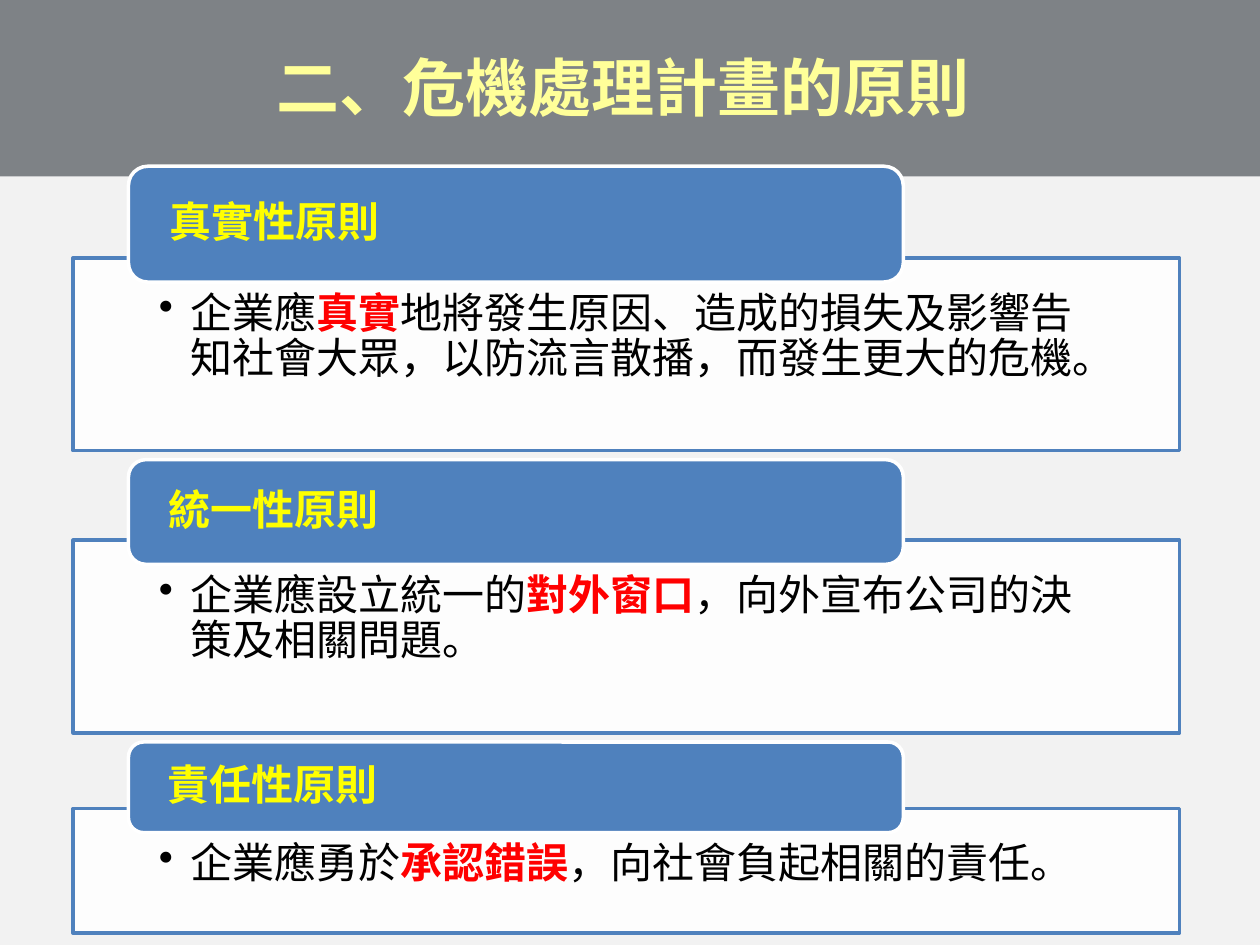
from dataclasses import dataclass

from lxml import etree
from pptx import Presentation
from pptx.dml.color import RGBColor
from pptx.enum.shapes import MSO_SHAPE
from pptx.enum.text import MSO_ANCHOR, PP_ALIGN
from pptx.oxml.ns import qn
from pptx.util import Pt

RECTANGLE = MSO_SHAPE.RECTANGLE
ROUNDED = MSO_SHAPE.ROUNDED_RECTANGLE
TOP, MIDDLE, BOTTOM = MSO_ANCHOR.TOP, MSO_ANCHOR.MIDDLE, MSO_ANCHOR.BOTTOM
LEFT, CENTER = PP_ALIGN.LEFT, PP_ALIGN.CENTER


@dataclass(frozen=True)
class Theme:
    font: str = "Noto Sans CJK SC"
    title_size: int = 36
    text_size: int = 24
    line_width: int = 2
    background: str = "F2F2F2"
    band: str = "0C141C"
    title: str = "FFFF99"
    accent: str = "4F81BD"
    white: str = "FFFFFF"
    heading: str = "FFFF00"
    body: str = "000000"
    emphasis: str = "FF0000"


THEME = Theme()

TITLE = "二、危機處理計畫的原則"
# heading, (before, emphasised, after), heading height, panel height
PRINCIPLES = [
    ("真實性原則",
     ("企業應", "真實", "地將發生原因、造成的損失及影響告知社會大眾，以防流言散播，而發生更大的危機。"),
     66.2, 110.2),
    ("統一性原則",
     ("企業應設立統一的", "對外窗口", "，向外宣布公司的決策及相關問題。"),
     59.8, 110.2),
    ("責任性原則",
     ("企業應勇於", "承認錯誤", "，向社會負起相關的責任。"),
     51.8, 71.3),
]

PAGE_WIDTH, PAGE_HEIGHT = 720, 540
BAND_HEIGHT = 100.8
TITLE_BOX = (36.7, 12.2, 638, 62.6)
PANEL_LEFT, PANEL_WIDTH = 41.8, 632.2
HEADING_LEFT, HEADING_WIDTH = 73.4, 442.8
FIRST_TOP, OVERLAP, GAP = 95, 13.8, 5.1
TITLE_INSETS = (6, 3, 6, 3)
PANEL_INSETS = (49, 19.4, 49, 13.7)
HEADING_INSETS = (20, 0, 20, 0)
BULLET_INDENT = 18


def color(value):
    return RGBColor.from_string(value)


def add_box(page, kind, frame, fill, line=None, opacity=100):
    box = page.shapes.add_shape(kind, *map(Pt, frame))
    box.shadow.inherit = False
    box.fill.solid()
    box.fill.fore_color.rgb = color(fill)
    if opacity < 100:
        fill_color = box.fill._xPr.find(qn("a:solidFill"))[0]
        etree.SubElement(fill_color, qn("a:alpha"), val=str(opacity * 1000))
    if line:
        box.line.color.rgb = color(line)
        box.line.width = Pt(THEME.line_width)
    else:
        box.line.fill.background()
    return box


def write(box, spans, size, insets, anchor, align=LEFT):
    """Fill the box with one paragraph of (text, colour, bold) spans."""
    frame = box.text_frame
    frame.word_wrap = True
    frame.vertical_anchor = anchor
    (frame.margin_left, frame.margin_top,
     frame.margin_right, frame.margin_bottom) = map(Pt, insets)
    para = frame.paragraphs[0]
    para.alignment = align
    para.line_spacing = 0.9
    for text, text_color, bold in spans:
        span = para.add_run()
        span.text = text
        span.font.size = Pt(size)
        span.font.bold = bold
        span.font.color.rgb = color(text_color)
        span.font.name = THEME.font
        etree.SubElement(span.font._element, qn("a:ea"), typeface=THEME.font)
    return para


def add_bullet(para):
    props = para._p.get_or_add_pPr()
    props.set("marL", str(Pt(BULLET_INDENT)))
    props.set("indent", str(-Pt(BULLET_INDENT)))
    etree.SubElement(props, qn("a:buChar"), char="•")


def add_principle(page, top, heading, parts, heading_height, panel_height):
    """Draw a panel with its overlapping heading; return the panel's bottom."""
    panel_top = top + heading_height - OVERLAP
    panel = add_box(page, RECTANGLE, (PANEL_LEFT, panel_top, PANEL_WIDTH, panel_height),
                    THEME.white, THEME.accent, opacity=90)
    before, emphasised, after = parts
    spans = [(before, THEME.body, False), (emphasised, THEME.emphasis, True),
             (after, THEME.body, False)]
    add_bullet(write(panel, spans, THEME.text_size, PANEL_INSETS, TOP))

    tab = add_box(page, ROUNDED, (HEADING_LEFT, top, HEADING_WIDTH, heading_height),
                  THEME.accent, THEME.white)
    write(tab, [(heading, THEME.heading, True)], THEME.text_size, HEADING_INSETS, MIDDLE)
    return panel_top + panel_height


def main():
    deck = Presentation()
    deck.slide_width, deck.slide_height = Pt(PAGE_WIDTH), Pt(PAGE_HEIGHT)
    page = deck.slides.add_slide(deck.slide_layouts[6])
    page.background.fill.solid()
    page.background.fill.fore_color.rgb = color(THEME.background)

    add_box(page, RECTANGLE, (0, 0, PAGE_WIDTH, BAND_HEIGHT), THEME.band, opacity=50)
    title = page.shapes.add_textbox(*map(Pt, TITLE_BOX))
    write(title, [(TITLE, THEME.title, True)], THEME.title_size, TITLE_INSETS, BOTTOM, CENTER)

    top = FIRST_TOP
    for principle in PRINCIPLES:
        top = add_principle(page, top, *principle) + GAP

    deck.save("out.pptx")


if __name__ == "__main__":
    main()
